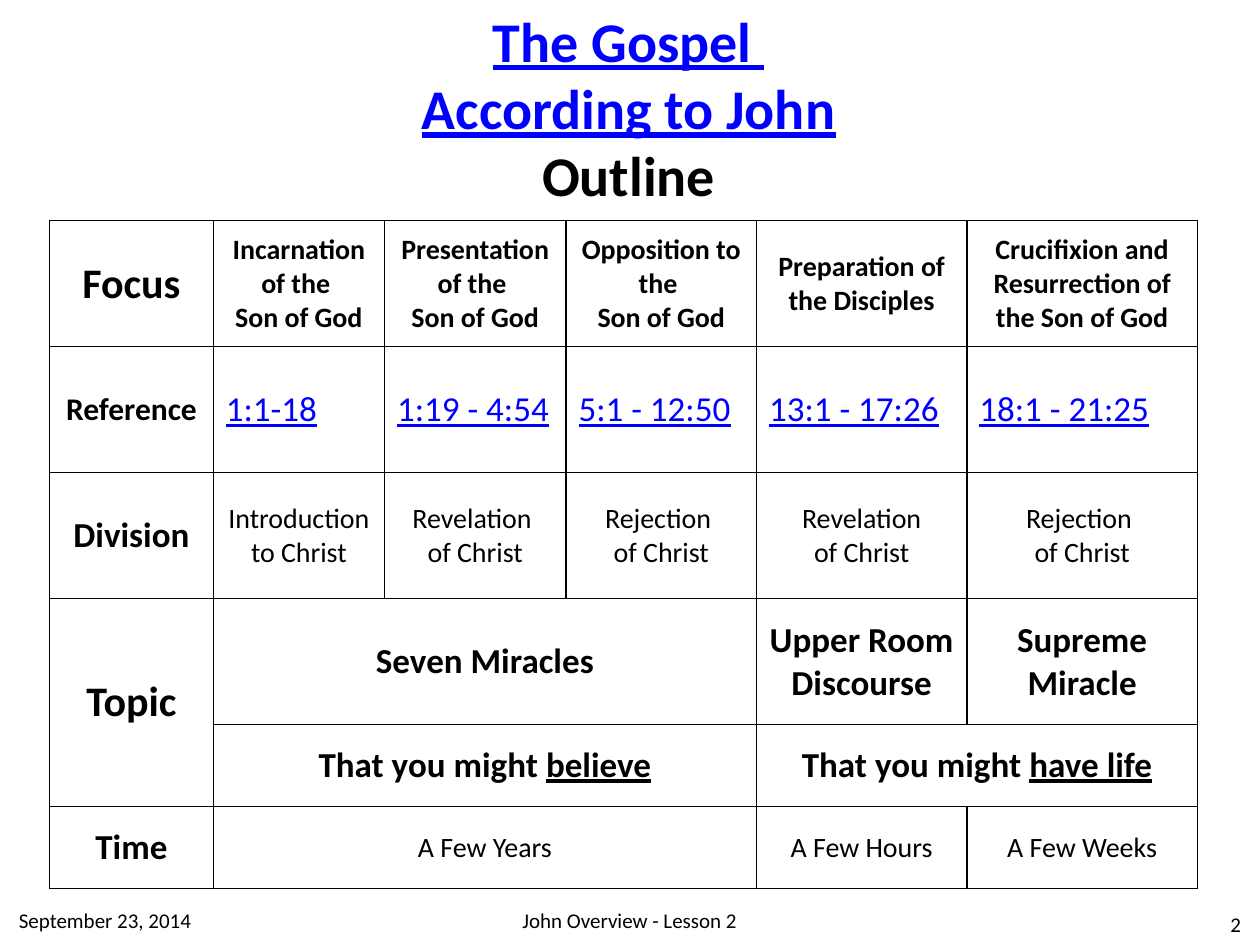
from lxml import etree
from pptx import Presentation
from pptx.dml import color
from pptx.enum import text
from pptx.oxml import ns
from pptx.util import Cm, Pt

HUES = {"ink": "000000", "link": "0000FF"}
ALIGN = {"l": text.PP_ALIGN.LEFT, "c": text.PP_ALIGN.CENTER, "r": text.PP_ALIGN.RIGHT}


def write(frame, words, size=16, bold=False, hue="ink", under=False, align="c", face="Calibri"):
    for i, line in enumerate(words.split("\n")):
        para = frame.paragraphs[0] if i == 0 else frame.add_paragraph()
        para.alignment = ALIGN[align]
        for j, part in enumerate(line.split("_")):
            if not part:
                continue
            run = para.add_run()
            run.text = part
            font = run.font
            font.name, font.size, font.bold = face, Pt(size), bold
            font.underline = under or j % 2 == 1
            font.color.rgb = color.RGBColor.from_string(HUES[hue])


def border(cell, width=1):
    props = cell._tc.get_or_add_tcPr()
    for i, side in enumerate("LRTB"):
        line = etree.Element(ns.qn(f"a:ln{side}"), w=str(Pt(width)))
        fill = etree.SubElement(line, ns.qn("a:solidFill"))
        etree.SubElement(fill, ns.qn("a:srgbClr"), val=HUES["ink"])
        props.insert(i, line)


class Deck:
    def __init__(self, face="Calibri"):
        self.face = face
        self.show = Presentation()
        self.show.slide_width, self.show.slide_height = Cm(25.4), Cm(19.05)
        self.slide = self.show.slides.add_slide(self.show.slide_layouts[6])

    def label(self, place, words, wrap=True, **style):
        frame = self.slide.shapes.add_textbox(*map(Cm, place)).text_frame
        frame.word_wrap = wrap
        frame.vertical_anchor = text.MSO_ANCHOR.MIDDLE if wrap else text.MSO_ANCHOR.TOP
        write(frame, words, face=self.face, **style)
        return frame

    def table(self, left, top, wides, highs, spans, cells):
        grid = self.slide.shapes.add_table(
            len(highs), len(wides), Cm(left), Cm(top), Cm(sum(wides)), Cm(sum(highs))
        ).table
        grid.first_row = grid.horz_banding = False
        for col, wide in zip(grid.columns, wides):
            col.width = Cm(wide)
        for row, high in zip(grid.rows, highs):
            row.height = Cm(high)
        for first, last in spans:
            grid.cell(*first).merge(grid.cell(*last))
        for cell in grid.iter_cells():
            cell.fill.background()
            cell.vertical_anchor = text.MSO_ANCHOR.MIDDLE
            border(cell)
        for (row, col), (words, style) in cells.items():
            write(grid.cell(row, col).text_frame, words, face=self.face, **style)


HEAD = {"bold": True}
REF = {"size": 20, "hue": "link", "under": True, "align": "l"}
BIG = {"size": 20, "bold": True}
SIDE = [("Focus", 24), ("Reference", 18), ("Division", 20), ("Topic", 24), None, ("Time", 20)]
BODY = [
    (HEAD, ["Incarnation of the \nSon of God", "Presentation of the \nSon of God",
            "Opposition to the \nSon of God", "Preparation of the Disciples",
            "Crucifixion and Resurrection of the Son of God"]),
    (REF, ["1:1-18", "1:19 - 4:54", "5:1 - 12:50", "13:1 - 17:26", "18:1 - 21:25"]),
    ({}, ["Introduction to Christ", "Revelation \nof Christ", "Rejection \nof Christ",
          "Revelation\nof Christ", "Rejection \nof Christ"]),
    (BIG, ["Seven Miracles", None, None, "Upper Room Discourse", "Supreme Miracle"]),
    (BIG, ["That you might _believe_", None, None, "That you might _have life_", None]),
    ({}, ["A Few Years", None, None, "A Few Hours", "A Few Weeks"]),
]
SPANS = [((3, 0), (4, 0)), ((4, 4), (4, 5))] + [((r, 1), (r, 3)) for r in (3, 4, 5)]


def main():
    deck = Deck()
    title = deck.label((8.08, 0, 9.19, 4.37), "The Gospel \nAccording to John",
                       wrap=False, size=32, bold=True, hue="link", under=True)
    write_last = title.add_paragraph()
    write_last.alignment = ALIGN["c"]
    run = write_last.add_run()
    run.text = "Outline"
    run.font.name, run.font.size, run.font.bold = deck.face, Pt(32), True
    run.font.color.rgb = color.RGBColor.from_string(HUES["ink"])

    cells = {(r, 0): (item[0], {"size": item[1], "bold": True})
             for r, item in enumerate(SIDE) if item}
    cells.update({(r, c): (words, style) for r, (style, row) in enumerate(BODY)
                  for c, words in enumerate(row, 1) if words})
    deck.table(1, 4.45, [3.3, 3.45, 3.66, 3.84, 4.24, 4.65],
               [2.54] * 4 + [1.65] * 2, SPANS, cells)

    deck.label((23.37, 18.11, 1.9, 1.02), "2", size=12, align="r")
    deck.label((4.34, 18.03, 16.71, 1.02), "John Overview - Lesson 2", size=12)
    deck.label((0.13, 18.03, 5.16, 1.02), "September 23, 2014", size=12, align="l")
    deck.show.save("out.pptx")


if __name__ == "__main__":
    main()
